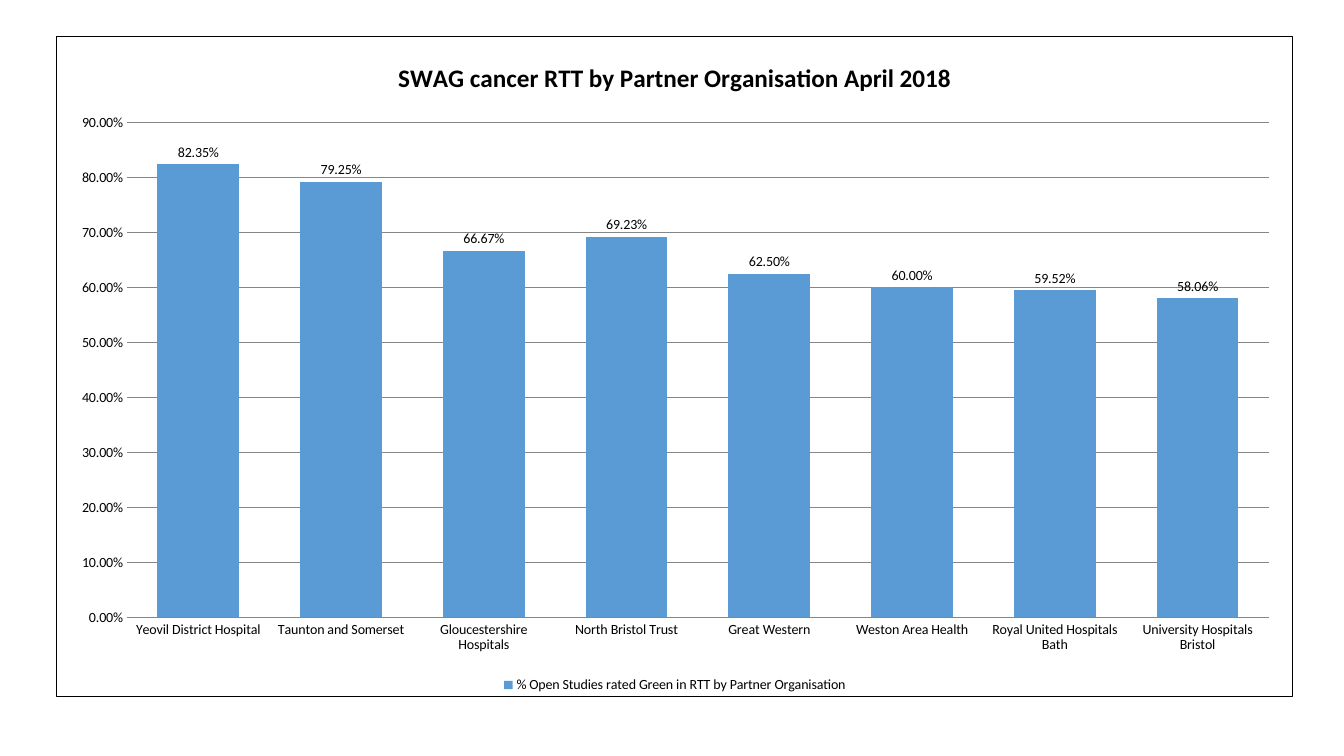
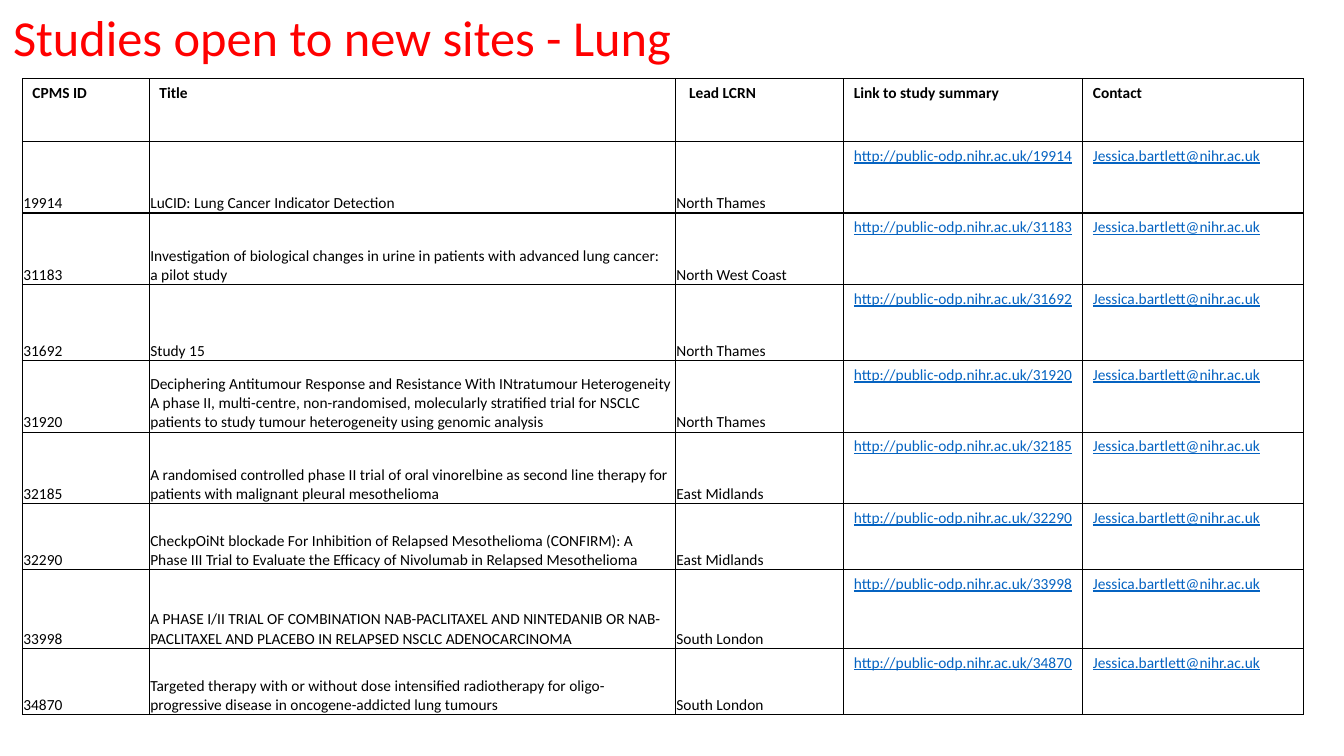
from dataclasses import dataclass

from lxml.etree import SubElement
from pptx import Presentation
from pptx.chart.data import CategoryChartData
from pptx.dml.color import RGBColor
from pptx.enum.chart import XL_CHART_TYPE, XL_LABEL_POSITION, XL_LEGEND_POSITION, XL_TICK_MARK
from pptx.enum.text import MSO_ANCHOR
from pptx.oxml import parse_xml
from pptx.oxml.ns import nsdecls, qn
from pptx.util import Pt


@dataclass(frozen=True)
class Theme:
    font: str = "Calibri"
    ink: str = "000000"
    paper: str = "FFFFFF"
    heading: str = "FF0000"
    link: str = "0563C1"
    bar: str = "5B9BD5"
    grid: str = "868686"
    heading_size: float = 36
    chart_title_size: float = 18
    table_size: float = 11
    chart_size: float = 10


THEME = Theme()

CHART_TITLE = "SWAG cancer RTT by Partner Organisation April 2018"
SERIES_NAME = "% Open Studies rated Green in RTT by Partner Organisation"
GREEN_RATES = {
    "Yeovil District Hospital": 0.8235,
    "Taunton and Somerset": 0.7925,
    "Gloucestershire Hospitals": 0.6667,
    "North Bristol Trust": 0.6923,
    "Great Western": 0.625,
    "Weston Area Health": 0.6,
    "Royal United Hospitals Bath": 0.5952,
    "University Hospitals Bristol": 0.5806,
}
CHART_BOX = (40.3, 25.9, 883.4, 472.3)
PLOT_BOX = (50, 61.3, 816.5, 354.2)

HEADERS = ["CPMS ID", "Title", "Lead LCRN", "Link to study summary", "Contact"]
HEADER_INSETS = [7.2, 7.2, 9.7, 7.2, 7.2]
SUMMARY_SITE = "http://public-odp.nihr.ac.uk/"
CONTACT = "Jessica.bartlett@nihr.ac.uk"
STUDIES = [
    ("19914", "LuCID: Lung Cancer Indicator Detection", "North Thames"),
    ("31183", "Investigation of biological changes in urine in patients with advanced "
              "lung cancer:\na pilot study", "North West Coast"),
    ("31692", "Study 15", "North Thames"),
    ("31920", "Deciphering Antitumour Response and Resistance With INtratumour Heterogeneity\n"
              "A phase II, multi-centre, non-randomised, molecularly stratified trial for NSCLC "
              "patients to study tumour heterogeneity using genomic analysis", "North Thames"),
    ("32185", "A randomised controlled phase II trial of oral vinorelbine as second line therapy "
              "for patients with malignant pleural mesothelioma", "East Midlands"),
    ("32290", "CheckpOiNt blockade For Inhibition of Relapsed Mesothelioma (CONFIRM): A Phase III "
              "Trial to Evaluate the Efficacy of Nivolumab in Relapsed Mesothelioma",
     "East Midlands"),
    ("33998", "A PHASE I/II TRIAL OF COMBINATION NAB-PACLITAXEL AND NINTEDANIB OR "
              "NAB-PACLITAXEL AND PLACEBO IN RELAPSED NSCLC ADENOCARCINOMA", "South London"),
    ("34870", "Targeted therapy with or without dose intensified radiotherapy for "
              "oligo-progressive disease in oncogene-addicted lung tumours", "South London"),
]
COLUMN_WIDTHS = [90.7, 375.8, 120.2, 170.8, 157.6]
ROW_HEIGHTS = [45, 51, 51.2, 54.2, 51.1, 51.1, 47.3, 56, 47.6]
TABLE_ORIGIN = (16, 56.2)
HEADING_BOX = (2.2, 0.7, 622, 56.2)


def points(lengths):
    return [Pt(length) for length in lengths]


def style_font(font, size, color=THEME.ink, bold=False, underline=False):
    font.name = THEME.font
    font.size = Pt(size)
    font.bold = bold
    font.underline = underline
    font.color.rgb = RGBColor.from_string(color)


def write(paragraph, text, size, **style):
    for number, line in enumerate(text.split("\n")):
        if number:
            paragraph.add_line_break()
        run = paragraph.add_run()
        run.text = line
        style_font(run.font, size, **style)


def add_heading(slide, text):
    frame = slide.shapes.add_textbox(*points(HEADING_BOX)).text_frame
    frame.word_wrap = True
    frame.vertical_anchor = MSO_ANCHOR.MIDDLE
    paragraph = frame.paragraphs[0]
    paragraph.line_spacing = 0.9
    write(paragraph, text, THEME.heading_size, color=THEME.heading)


def frame_chart(chart):
    border = parse_xml(
        f'<c:spPr {nsdecls("c", "a")}>'
        f'<a:solidFill><a:srgbClr val="{THEME.paper}"/></a:solidFill>'
        f'<a:ln w="{Pt(0.75)}"><a:solidFill><a:srgbClr val="{THEME.ink}"/></a:solidFill></a:ln>'
        '</c:spPr>')
    chart.element.find(qn("c:chart")).addnext(border)


def place_plot(chart):
    plot_area = chart.element.find(qn("c:chart")).find(qn("c:plotArea"))
    layout = plot_area.find(qn("c:layout"))
    if layout is None:
        layout = parse_xml(f'<c:layout {nsdecls("c")}/>')
        plot_area.insert(0, layout)
    manual = SubElement(layout, qn("c:manualLayout"))
    settings = {"layoutTarget": "inner", "xMode": "edge", "yMode": "edge"}
    for key, length, whole in zip("xywh", PLOT_BOX, CHART_BOX[2:] * 2):
        settings[key] = f"{length / whole:.4f}"
    for key, value in settings.items():
        SubElement(manual, qn(f"c:{key}")).set("val", value)


def style_axes(chart):
    categories, rates = chart.category_axis, chart.value_axis
    for axis in (categories, rates):
        axis.major_tick_mark = XL_TICK_MARK.NONE
        axis.minor_tick_mark = XL_TICK_MARK.NONE
    categories.format.line.color.rgb = RGBColor.from_string(THEME.grid)
    rates.format.line.fill.background()
    rates.minimum_scale, rates.maximum_scale, rates.major_unit = 0, 0.9, 0.1
    rates.tick_labels.number_format = "0.00%"
    rates.tick_labels.number_format_is_linked = False
    gridline = rates.major_gridlines.format.line
    gridline.color.rgb = RGBColor.from_string(THEME.grid)
    gridline.width = Pt(0.75)


def style_bars(plot):
    plot.gap_width = 75
    plot.overlap = -25
    plot.vary_by_categories = False
    fill = plot.series[0].format.fill
    fill.solid()
    fill.fore_color.rgb = RGBColor.from_string(THEME.bar)
    plot.has_data_labels = True
    labels = plot.data_labels
    labels.show_value = True
    labels.number_format = "0.00%"
    labels.number_format_is_linked = False
    labels.position = XL_LABEL_POSITION.OUTSIDE_END
    style_font(labels.font, THEME.chart_size)


def add_rate_chart(slide):
    data = CategoryChartData(number_format="0.00%")
    data.categories = list(GREEN_RATES)
    data.add_series(SERIES_NAME, list(GREEN_RATES.values()))
    chart = slide.shapes.add_chart(
        XL_CHART_TYPE.COLUMN_CLUSTERED, *points(CHART_BOX), data).chart
    style_font(chart.font, THEME.chart_size)
    chart.has_title = True
    write(chart.chart_title.text_frame.paragraphs[0], CHART_TITLE,
          THEME.chart_title_size, bold=True)
    chart.chart_title.include_in_layout = False
    chart.has_legend = True
    chart.legend.position = XL_LEGEND_POSITION.BOTTOM
    chart.legend.include_in_layout = False
    style_axes(chart)
    style_bars(chart.plots[0])
    place_plot(chart)
    frame_chart(chart)


def finish_cell(cell):
    properties = cell._tc.get_or_add_tcPr()
    for side in ("lnL", "lnR", "lnT", "lnB"):
        properties.append(parse_xml(
            f'<a:{side} {nsdecls("a")} w="{Pt(1)}"><a:solidFill>'
            f'<a:srgbClr val="{THEME.ink}"/></a:solidFill></a:{side}>'))
    cell.fill.solid()
    cell.fill.fore_color.rgb = RGBColor.from_string(THEME.paper)


def fill_cell(cell, text, **style):
    write(cell.text_frame.paragraphs[0], text, THEME.table_size, **style)
    finish_cell(cell)


def fill_study_row(cells, study):
    for cell, text in zip(cells[:3], study):
        cell.vertical_anchor = MSO_ANCHOR.BOTTOM
        cell.margin_left = cell.margin_right = cell.margin_top = Pt(0.7)
        cell.margin_bottom = Pt(0)
        fill_cell(cell, text)
    for cell, address in zip(cells[3:], (SUMMARY_SITE + study[0], CONTACT)):
        fill_cell(cell, address, color=THEME.link, underline=True)


def add_study_table(slide):
    size = (sum(COLUMN_WIDTHS), sum(ROW_HEIGHTS))
    table = slide.shapes.add_table(
        len(ROW_HEIGHTS), len(COLUMN_WIDTHS), *points(TABLE_ORIGIN + size)).table
    table.first_row = table.horz_banding = False
    for column, width in zip(table.columns, COLUMN_WIDTHS):
        column.width = Pt(width)
    for row, height in zip(table.rows, ROW_HEIGHTS):
        row.height = Pt(height)
    header, *study_rows = [list(row.cells) for row in table.rows]
    for cell, text, inset in zip(header, HEADERS, HEADER_INSETS):
        cell.margin_left = Pt(inset)
        fill_cell(cell, text, bold=True)
    for cells, study in zip(study_rows, STUDIES):
        fill_study_row(cells, study)


def main():
    deck = Presentation()
    deck.slide_width, deck.slide_height = points((960, 540))
    blank = deck.slide_layouts[6]
    add_rate_chart(deck.slides.add_slide(blank))
    lung_slide = deck.slides.add_slide(blank)
    add_study_table(lung_slide)
    add_heading(lung_slide, "Studies open to new sites - Lung")
    deck.save("out.pptx")


if __name__ == "__main__":
    main()
